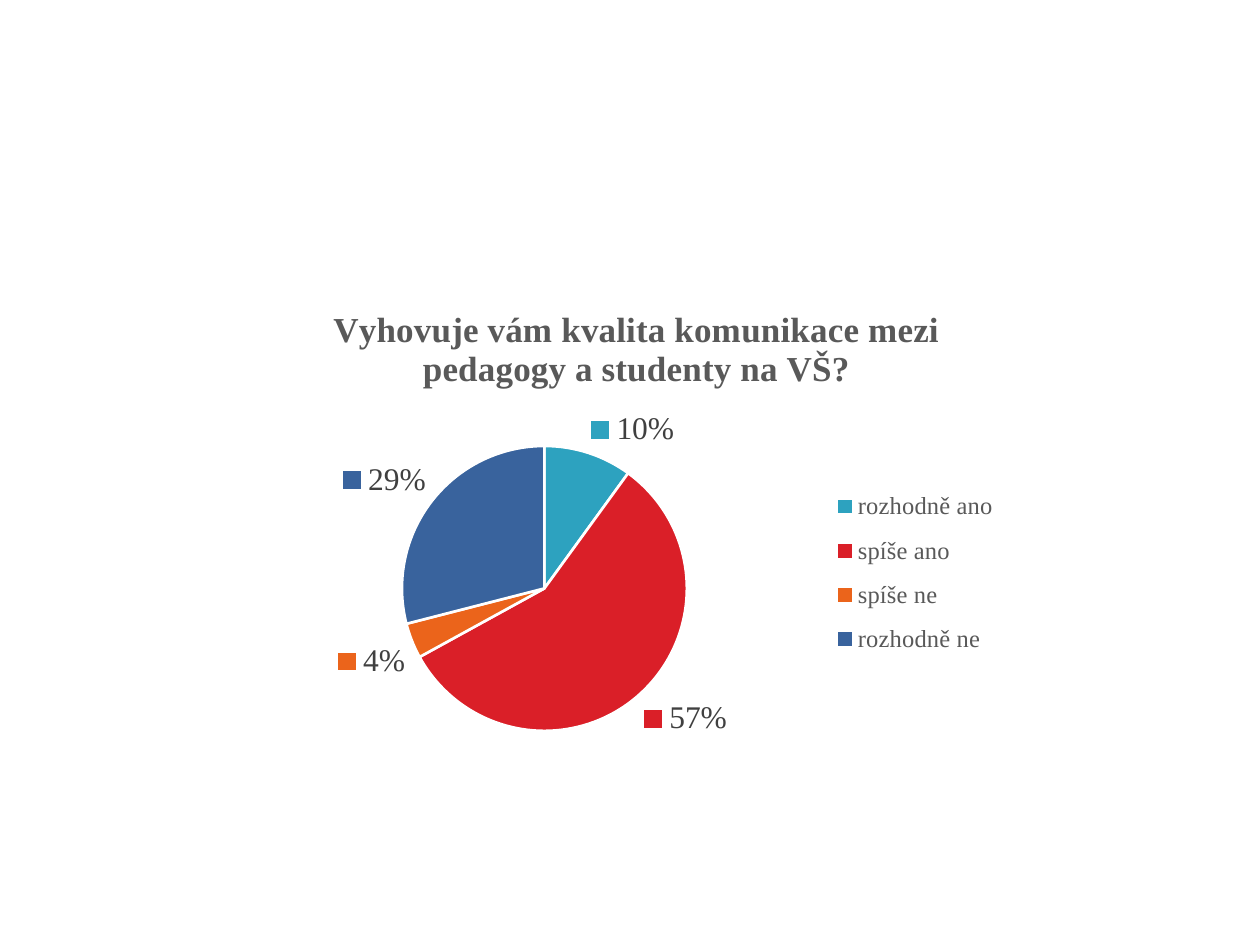
import pptx
import pptx.util
import pptx.chart.data
import pptx.dml.color
import pptx.enum.chart
import pptx.oxml
import pptx.oxml.ns

PX = 914400 // 126
C = pptx.enum.chart


class Theme:
    base = dict(name="Cambria", size=10, color="000000")
    title = dict(name="Times New Roman", size=20, bold=True, color="595959")
    legend = dict(name="Times New Roman", size=14, color="595959")
    label = dict(name="Times New Roman", size=18, color="404040")
    border = "FFFFFF"
    border_width = 1.5


class Slide:
    def __init__(self, prs, theme):
        self.theme = theme
        self.s = prs.slides.add_slide(prs.slide_layouts[6])

    def rgb(self, value):
        return pptx.dml.color.RGBColor.from_string(value)

    def font(self, font, fmt):
        for key, value in fmt.items():
            if key == "color":
                font.color.rgb = self.rgb(value)
            else:
                setattr(font, key, pptx.util.Pt(value) if key == "size" else value)

    def layout(self, frame, box, inner=False):
        x, y, w, h = frame
        values = dict(zip("xywh", ((box[0] - x) / w, (box[1] - y) / h,
                                   *(n / d for n, d in zip(box[2:], (w, h))))))
        target = '<c:layoutTarget val="inner"/>' if inner else ""
        modes = "".join(f'<c:{k}Mode val="edge"/>' for k in "xy")
        sizes = "".join(f'<c:{k} val="{v:.4f}"/>' for k, v in values.items())
        return pptx.oxml.parse_xml(
            f'<c:layout {pptx.oxml.ns.nsdecls("c")}><c:manualLayout>'
            f"{target}{modes}{sizes}</c:manualLayout></c:layout>")

    def place(self, parent, after, layout):
        for old in parent.findall(pptx.oxml.ns.qn("c:layout")):
            parent.remove(old)
        if after:
            parent.find(pptx.oxml.ns.qn(after)).addnext(layout)
        else:
            parent.insert(0, layout)

    def pie(self, frame, title, shares, colors, title_at, plot_box, legend_box):
        data = pptx.chart.data.CategoryChartData()
        data.categories = list(shares)
        data.add_series("Series 1", list(shares.values()))
        chart = self.s.shapes.add_chart(
            C.XL_CHART_TYPE.PIE, *(v * PX for v in frame), data).chart
        self.font(chart.font, self.theme.base)

        chart.has_title = True
        r = chart.chart_title.text_frame.paragraphs[0].add_run()
        r.text = title
        self.font(r.font, self.theme.title)
        title_xml = chart._chartSpace.chart.find(pptx.oxml.ns.qn("c:title"))
        self.place(title_xml, "c:tx", self.layout(frame, title_at))

        chart.has_legend = True
        legend = chart.legend
        legend.position = C.XL_LEGEND_POSITION.RIGHT
        legend.include_in_layout = False
        self.font(legend.font, self.theme.legend)
        self.place(legend._element, "c:legendPos", self.layout(frame, legend_box))

        plot = chart.plots[0]
        plot.vary_by_categories = True
        self.place(chart._chartSpace.chart.plotArea, None,
                   self.layout(frame, plot_box, inner=True))
        for i, color in enumerate(colors):
            fmt = plot.series[0].points[i].format
            fmt.fill.solid()
            fmt.fill.fore_color.rgb = self.rgb(color)
            fmt.line.color.rgb = self.rgb(self.theme.border)
            fmt.line.width = pptx.util.Pt(self.theme.border_width)

        labels = plot.series[0].data_labels
        options = dict(show_percentage=True, show_value=False, show_legend_key=True,
                       number_format="0%", number_format_is_linked=False,
                       position=C.XL_LABEL_POSITION.OUTSIDE_END)
        for key, value in options.items():
            setattr(labels, key, value)
        self.font(labels.font, self.theme.label)


def main():
    prs = pptx.Presentation()
    prs.slide_width, prs.slide_height = pptx.util.Inches(10), pptx.util.Inches(7.5)
    Slide(prs, Theme).pie(
        frame=(233, 275, 794, 496),
        title="Vyhovuje vám kvalita komunikace mezi pedagogy a studenty na VŠ?",
        shares={"rozhodně ano": 10, "spíše ano": 57, "spíše ne": 4, "rozhodně ne": 29},
        colors=("2DA2BF", "DA1F28", "EB641B", "39639D"),
        title_at=(327, 300),
        plot_box=(402, 446, 285, 285),
        legend_box=(828, 476, 175, 194))
    prs.save("out.pptx")


if __name__ == "__main__":
    main()
